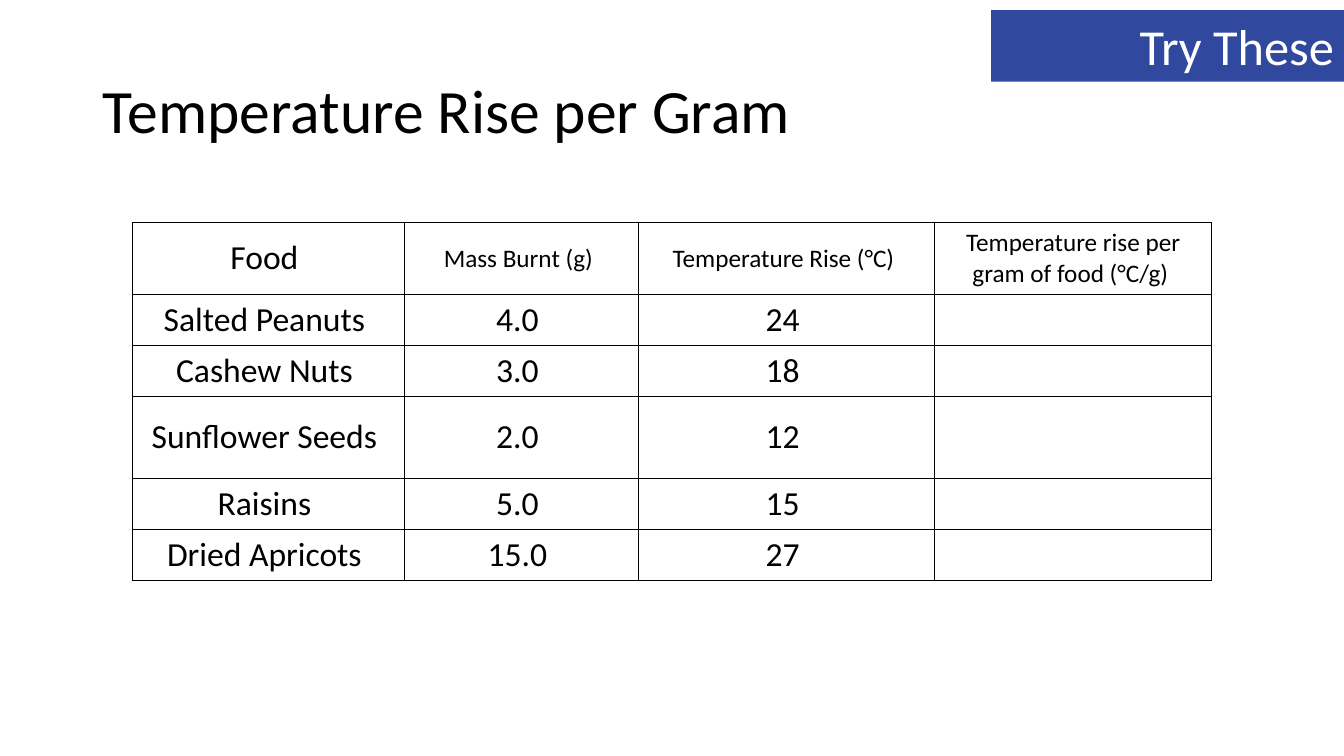
from lxml import etree
from pptx import Presentation
from pptx.dml.color import RGBColor
from pptx.enum.shapes import MSO_SHAPE as SHAPE
from pptx.enum.text import MSO_ANCHOR as ANCHOR, MSO_AUTO_SIZE as AUTO, PP_ALIGN as ALIGN
from pptx.oxml import parse_xml
from pptx.oxml.ns import nsdecls
from pptx.util import Inches, Pt

WIDTH, HEIGHT = 13.33, 7.5
FONT = "Calibri"
BLACK, WHITE, BLUE = "000000", "FFFFFF", "31489F"
COLUMNS = [2.7, 2.32, 2.94, 2.75]
ROWS = [0.67, 0.48, 0.48, 0.81, 0.48, 0.48]
HEADINGS = ["Food", "Mass Burnt (g)", "Temperature Rise (°C)",
            "Temperature rise per gram of food (°C/g)"]
FOODS = [
    ["Salted Peanuts", "4.0", "24", ""],
    ["Cashew Nuts", "3.0", "18", ""],
    ["Sunflower Seeds", "2.0", "12", ""],
    ["Raisins", "5.0", "15", ""],
    ["Dried Apricots", "15.0", "27", ""],
]


def rgb(value):
    """Turn a hex string into a colour."""
    return RGBColor.from_string(value)


def apply(target, formats):
    """Set attributes of an object from a dict of format values."""
    for name, value in formats.items():
        setattr(target, name, value)


def box(left, top, width, height):
    """Return a position and size in inches as a dict of lengths."""
    names = ("left", "top", "width", "height")
    return dict(zip(names, map(Inches, (left, top, width, height))))


def write(tf, text, size, color, align, spacing=1.0):
    """Write one formatted paragraph into a text frame."""
    p = tf.paragraphs[0]
    apply(p, {"alignment": align, "line_spacing": spacing})
    r = p.add_run()
    r.text = text
    apply(r.font, {"name": FONT, "size": Pt(size)})
    r.font.color.rgb = rgb(color)


def add_title(s, text):
    """Place and format the slide title."""
    sp = s.shapes.title
    apply(sp, box(0.92, 0.4, 11.5, 1.45))
    tf = sp.text_frame
    apply(tf, {"vertical_anchor": ANCHOR.MIDDLE, "word_wrap": True, "auto_size": AUTO.NONE})
    write(tf, text, 44, BLACK, ALIGN.LEFT, 0.9)


def add_banner(s, text):
    """Add the coloured label that meets the right edge of the slide."""
    width = 3.5
    sp = s.shapes.add_shape(SHAPE.RECTANGLE, **box(WIDTH - width, 0.1, width, 0.71))
    sp.shadow.inherit = False
    sp.fill.solid()
    sp.fill.fore_color.rgb = rgb(BLUE)
    sp.line.fill.background()
    tf = sp.text_frame
    apply(tf, {"vertical_anchor": ANCHOR.TOP, "word_wrap": True,
               "auto_size": AUTO.SHAPE_TO_FIT_TEXT})
    write(tf, text, 36, WHITE, ALIGN.RIGHT)


def add_borders(cell, color, points):
    """Draw a solid line on all four sides of a cell."""
    props = cell._tc.get_or_add_tcPr()
    for index, side in enumerate(("lnL", "lnR", "lnT", "lnB")):
        line = parse_xml(f'<a:{side} {nsdecls("a")} w="{Pt(points)}"/>')
        fill = etree.SubElement(line, line.tag.replace(side, "solidFill"))
        etree.SubElement(fill, line.tag.replace(side, "srgbClr"), val=color)
        props.insert(index, line)


def add_food_table(s):
    """Add the table of foods with its headings."""
    place = box(1.31, 2.21, sum(COLUMNS), sum(ROWS))
    table = s.shapes.add_table(len(ROWS), len(COLUMNS), **place).table
    apply(table, {"first_row": False, "horz_banding": False})
    for column, width in zip(table.columns, COLUMNS):
        column.width = Inches(width)
    for row, height in zip(table.rows, ROWS):
        row.height = Inches(height)
    for i, texts in enumerate([HEADINGS] + FOODS):
        for j, text in enumerate(texts):
            cell = table.cell(i, j)
            cell.fill.background()
            cell.vertical_anchor = ANCHOR.MIDDLE
            add_borders(cell, BLACK, 0.75)
            if text:
                size = 18 if i == 0 and j > 0 else 24
                write(cell.text_frame, f"{text} ", size, BLACK, ALIGN.CENTER)


def main():
    """Build the slide and save it."""
    prs = Presentation()
    apply(prs, {"slide_width": Inches(WIDTH), "slide_height": Inches(HEIGHT)})
    s = prs.slides.add_slide(prs.slide_layouts[5])
    add_title(s, "Temperature Rise per Gram")
    add_food_table(s)
    add_banner(s, "Try These")
    prs.save("out.pptx")


if __name__ == "__main__":
    main()
